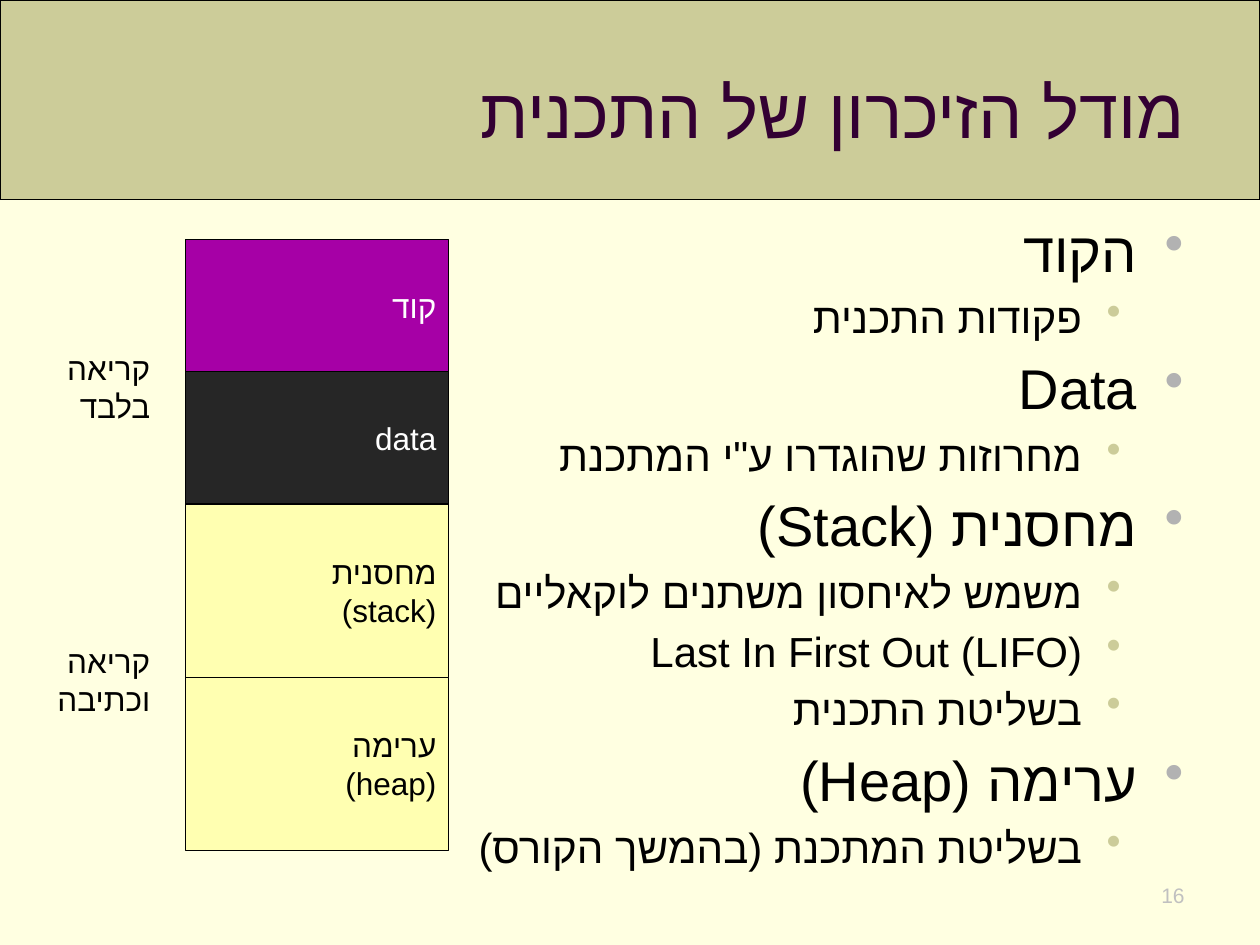
from lxml.etree import SubElement
from pptx import Presentation
from pptx.dml.color import RGBColor
from pptx.enum.shapes import MSO_SHAPE
from pptx.enum.text import MSO_ANCHOR, PP_ALIGN
from pptx.oxml.ns import qn
from pptx.util import Pt

CREAM = RGBColor(0xFF, 0xFF, 0xE1)
KHAKI = RGBColor(0xCC, 0xCC, 0x99)
PLUM = RGBColor(0x33, 0x00, 0x33)
PURPLE = RGBColor(0xA6, 0x00, 0xA6)
CHARCOAL = RGBColor(0x26, 0x26, 0x26)
YELLOW = RGBColor(0xFF, 0xFF, 0xB1)
GRAY = RGBColor(0xB2, 0xB2, 0xB2)
SILVER = RGBColor(0xC0, 0xC0, 0xC0)
BLACK = RGBColor(0x00, 0x00, 0x00)
WHITE = RGBColor(0xFF, 0xFF, 0xFF)

# Size, left indent, hanging indent and bullet colour of each outline level
LEVELS = [(32, 27, 27, GRAY), (24, 58.5, 22.5, KHAKI)]

OUTLINE = [
    (0, "הקוד "),
    (1, "פקודות התכנית "),
    (0, "Data"),
    (1, "מחרוזות שהוגדרו ע\"י המתכנת"),
    (0, "מחסנית (Stack)"),
    (1, "משמש לאיחסון משתנים לוקאליים"),
    (1, "Last In First Out (LIFO)"),
    (1, "בשליטת התכנית"),
    (0, "ערימה (Heap)"),
    (1, "בשליטת המתכנת (בהמשך הקורס)"),
]

# Text, height, fill and text colour of each memory segment, top down
SEGMENTS = [
    ("קוד", 75.6, PURPLE, WHITE),
    ("data", 75.6, CHARCOAL, WHITE),
    ("מחסנית \n(stack)", 99, YELLOW, BLACK),
    ("ערימה\n(heap)", 99, YELLOW, BLACK),
]


def write(para, text, size=18, color=BLACK, font="Arial"):
    """Fill a right-to-left paragraph; a newline is a line break."""
    para.text = text
    para.alignment = PP_ALIGN.RIGHT
    para._p.get_or_add_pPr().set("rtl", "1")
    for span in para.runs:
        span.font.size = Pt(size)
        span.font.name = font
        span.font.color.rgb = color
        # Hebrew letters take the complex-script font
        SubElement(span._r.get_or_add_rPr(), qn("a:cs"), typeface="Arial")


def add_bullet(para, indent, hanging, color):
    props = para._p.get_or_add_pPr()
    props.set("marL", str(Pt(indent)))
    props.set("indent", str(-Pt(hanging)))
    before = SubElement(props, qn("a:spcBef"))
    SubElement(before, qn("a:spcPct"), val="20000")
    bullet_color = SubElement(props, qn("a:buClr"))
    SubElement(bullet_color, qn("a:srgbClr"), val=str(color))
    SubElement(props, qn("a:buChar"), char="•")


def add_text(page, left, top, width, height, texts, anchor=MSO_ANCHOR.TOP, **style):
    """Add a text box with one paragraph for each text."""
    box = page.shapes.add_textbox(Pt(left), Pt(top), Pt(width), Pt(height))
    frame = box.text_frame
    frame.word_wrap = True
    frame.vertical_anchor = anchor
    for index, text in enumerate(texts):
        para = frame.add_paragraph() if index else frame.paragraphs[0]
        write(para, text, **style)
    return frame


def add_block(page, left, top, width, height, fill):
    block = page.shapes.add_shape(
        MSO_SHAPE.RECTANGLE, Pt(left), Pt(top), Pt(width), Pt(height))
    block.shadow.inherit = False
    block.fill.solid()
    block.fill.fore_color.rgb = fill
    block.line.color.rgb = BLACK
    block.line.width = Pt(0.75)
    return block


def add_outline(page):
    frame = add_text(page, 36, 120, 648, 384, [text for _, text in OUTLINE])
    for para, (level, text) in zip(frame.paragraphs, OUTLINE):
        size, indent, hanging, color = LEVELS[level]
        para.level = level
        for span in para.runs:
            span.font.size = Pt(size)
        add_bullet(para, indent, hanging, color)


def add_memory(page):
    top = 136.8
    for text, height, fill, color in SEGMENTS:
        block = add_block(page, 106, top, 150.5, height, fill)
        frame = block.text_frame
        frame.word_wrap = False
        frame.vertical_anchor = MSO_ANCHOR.MIDDLE
        write(frame.paragraphs[0], text, color=color)
        top += height


def main():
    deck = Presentation()
    deck.slide_width, deck.slide_height = Pt(720), Pt(540)
    page = deck.slides.add_slide(deck.slide_layouts[6])
    page.background.fill.solid()
    page.background.fill.fore_color.rgb = CREAM

    # Title band
    add_block(page, 0, 0, 720, 114, KHAKI)
    add_text(page, 36, 18, 648, 90, ["מודל הזיכרון של התכנית"],
             anchor=MSO_ANCHOR.MIDDLE, size=40, color=PLUM, font="Times New Roman")

    # Outline on the right, memory map with access labels on the left
    add_outline(page)
    for top, access in ((196, "בלבד"), (363.5, "וכתיבה")):
        add_text(page, 23, top, 70, 51, ["קריאה ", access])
    add_memory(page)

    # Slide number
    add_text(page, 516, 500.5, 168, 29, ["16"], size=12, color=SILVER)

    deck.save("out.pptx")


if __name__ == "__main__":
    main()
